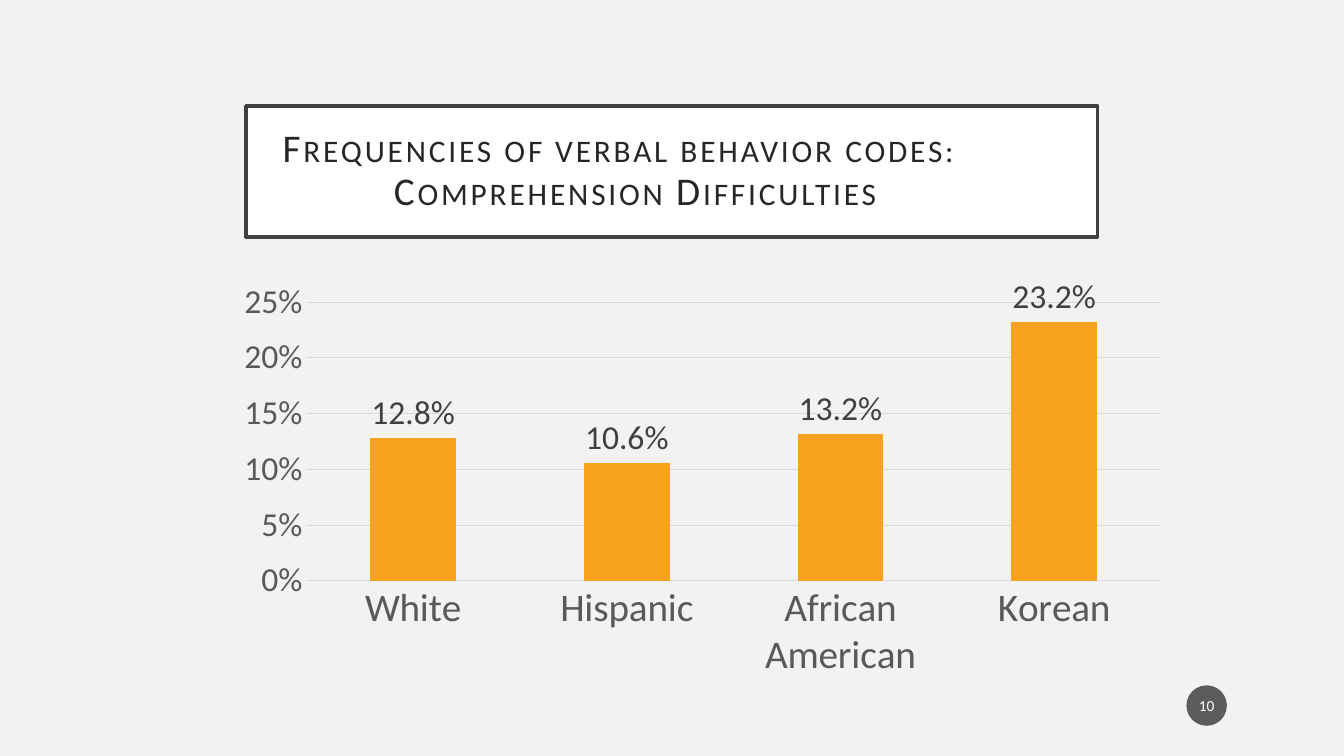
from dataclasses import dataclass

from lxml import etree
from pptx import Presentation
from pptx.chart.data import CategoryChartData
from pptx.dml.color import RGBColor
from pptx.enum.chart import XL_CHART_TYPE, XL_LABEL_POSITION, XL_TICK_MARK
from pptx.enum.shapes import MSO_SHAPE
from pptx.enum.text import MSO_ANCHOR, PP_ALIGN
from pptx.oxml import parse_xml
from pptx.oxml.ns import nsdecls, qn
from pptx.util import Cm, Pt

COLUMNS = XL_CHART_TYPE.COLUMN_CLUSTERED
ABOVE_BAR = XL_LABEL_POSITION.OUTSIDE_END
NO_TICKS = XL_TICK_MARK.NONE
RECTANGLE = MSO_SHAPE.RECTANGLE
CIRCLE = MSO_SHAPE.OVAL
MIDDLE = MSO_ANCHOR.MIDDLE
CENTER = PP_ALIGN.CENTER


@dataclass(frozen=True)
class Theme:
    """Colours, font and type sizes of the slide."""
    font: str = "Calibri"
    background: str = "F2F2F2"
    paper: str = "FFFFFF"
    frame: str = "404040"
    heading: str = "262626"
    axis: str = "595959"
    grid: str = "D9D9D9"
    bar: str = "F6A21D"
    badge: str = "1D1D1D"
    title_size: int = 28
    category_size: int = 28
    value_size: int = 24
    badge_size: int = 11


THEME = Theme()
DIFFICULTY_RATES = {
    "White": 0.128,
    "Hispanic": 0.106,
    "African American": 0.132,
    "Korean": 0.232,
}


def rgb(color):
    """Turn a theme colour into an RGBColor."""
    return RGBColor.from_string(color)


def style_font(font, size, color):
    """Give a font the theme typeface, a size and a colour."""
    font.name = THEME.font
    font.size = Pt(size)
    font.color.rgb = rgb(color)


def style_line(line, color):
    """Draw a hairline in the given colour."""
    line.color.rgb = rgb(color)
    line.width = Pt(0.75)


def add_panel(slide, preset, box, fill, insets):
    """Add a filled shape with centred text and return it with its paragraph."""
    panel = slide.shapes.add_shape(preset, *box)
    panel.shadow.inherit = False
    panel.fill.solid()
    panel.fill.fore_color.rgb = rgb(fill)
    frame = panel.text_frame
    frame.word_wrap = True
    frame.vertical_anchor = MIDDLE
    frame.margin_left = frame.margin_right = Cm(insets[0])
    frame.margin_top = frame.margin_bottom = Cm(insets[1])
    paragraph = frame.paragraphs[0]
    paragraph.alignment = CENTER
    return panel, paragraph


def add_title(slide, box, lines):
    """Place the framed small-caps title."""
    title, paragraph = add_panel(slide, RECTANGLE, box, THEME.paper, (0.5, 0.5))
    title.line.color.rgb = rgb(THEME.frame)
    title.line.width = Pt(2.5)
    paragraph.line_spacing = 0.9
    for index, line in enumerate(lines):
        if index:
            paragraph.add_line_break()
        run = paragraph.add_run()
        run.text = line
        style_font(run.font, THEME.title_size, THEME.heading)
        properties = run.font._element
        properties.set("cap", "small")
        properties.set("spc", "200")


def set_plot_area(chart, x, y, w, h):
    """Fix the inner plot area as fractions of the chart."""
    plot_area = chart._chartSpace.chart.plotArea
    for layout in plot_area.findall(qn("c:layout")):
        plot_area.remove(layout)
    places = "".join(
        f'<c:{tag} val="{value}"/>'
        for tag, value in (("xMode", "edge"), ("yMode", "edge"),
                           ("x", x), ("y", y), ("w", w), ("h", h)))
    plot_area.insert(0, parse_xml(
        f'<c:layout {nsdecls("c")}><c:manualLayout>'
        f'<c:layoutTarget val="inner"/>{places}</c:manualLayout></c:layout>'))


def add_rate_chart(slide, box, rates):
    """Place the column chart of rates by group."""
    data = CategoryChartData(number_format="0.0%")
    data.categories = list(rates)
    data.add_series("Series 1", list(rates.values()))
    chart = slide.shapes.add_chart(COLUMNS, *box, data).chart
    chart.has_legend = False
    chart.has_title = False
    style_font(chart.font, THEME.category_size, THEME.axis)
    set_plot_area(chart, 0.137, 0.054, 0.848, 0.667)

    groups, percent = chart.category_axis, chart.value_axis
    for axis, size in ((groups, THEME.category_size), (percent, THEME.value_size)):
        axis.major_tick_mark = axis.minor_tick_mark = NO_TICKS
        style_font(axis.tick_labels.font, size, THEME.axis)
    style_line(groups.format.line, THEME.grid)
    percent.format.line.fill.background()
    style_line(percent.major_gridlines.format.line, THEME.grid)
    percent.minimum_scale, percent.maximum_scale = 0, 0.25
    percent.major_unit = 0.05
    percent.tick_labels.number_format = "0%"
    percent.tick_labels.number_format_is_linked = False

    plot = chart.plots[0]
    plot.gap_width, plot.overlap = 150, -30
    plot.vary_by_categories = False
    bars = plot.series[0]
    bars.format.fill.solid()
    bars.format.fill.fore_color.rgb = rgb(THEME.bar)
    labels = bars.data_labels
    labels.show_value = True
    labels.number_format = "0.0%"
    labels.number_format_is_linked = False
    labels.position = ABOVE_BAR
    style_font(labels.font, THEME.value_size, THEME.frame)


def add_page_badge(slide, box, number):
    """Place the translucent round page number."""
    badge, paragraph = add_panel(slide, CIRCLE, box, THEME.badge, (0.05, 0.13))
    badge.line.fill.background()
    color = badge._element.spPr.find(qn("a:solidFill"))[0]
    etree.SubElement(color, qn("a:alpha")).set("val", "70000")
    badge.text_frame.word_wrap = False
    run = paragraph.add_run()
    run.text = str(number)
    style_font(run.font, THEME.badge_size, THEME.paper)


def main():
    """Build and save the slide."""
    deck = Presentation()
    deck.slide_width, deck.slide_height = Cm(33.87), Cm(19.05)
    slide = deck.slides.add_slide(deck.slide_layouts[6])
    slide.background.fill.solid()
    slide.background.fill.fore_color.rgb = rgb(THEME.background)
    add_title(slide, (Cm(6.2), Cm(2.67), Cm(21.46), Cm(3.3)),
              ("Frequencies of verbal behavior codes:", "Comprehension Difficulties"))
    add_rate_chart(slide, (Cm(4.24), Cm(6.99), Cm(25.4), Cm(10.59)), DIFFICULTY_RATES)
    add_page_badge(slide, (Cm(29.9), Cm(17.27), Cm(1.02), Cm(1.02)), 10)
    deck.save("out.pptx")


if __name__ == "__main__":
    main()
